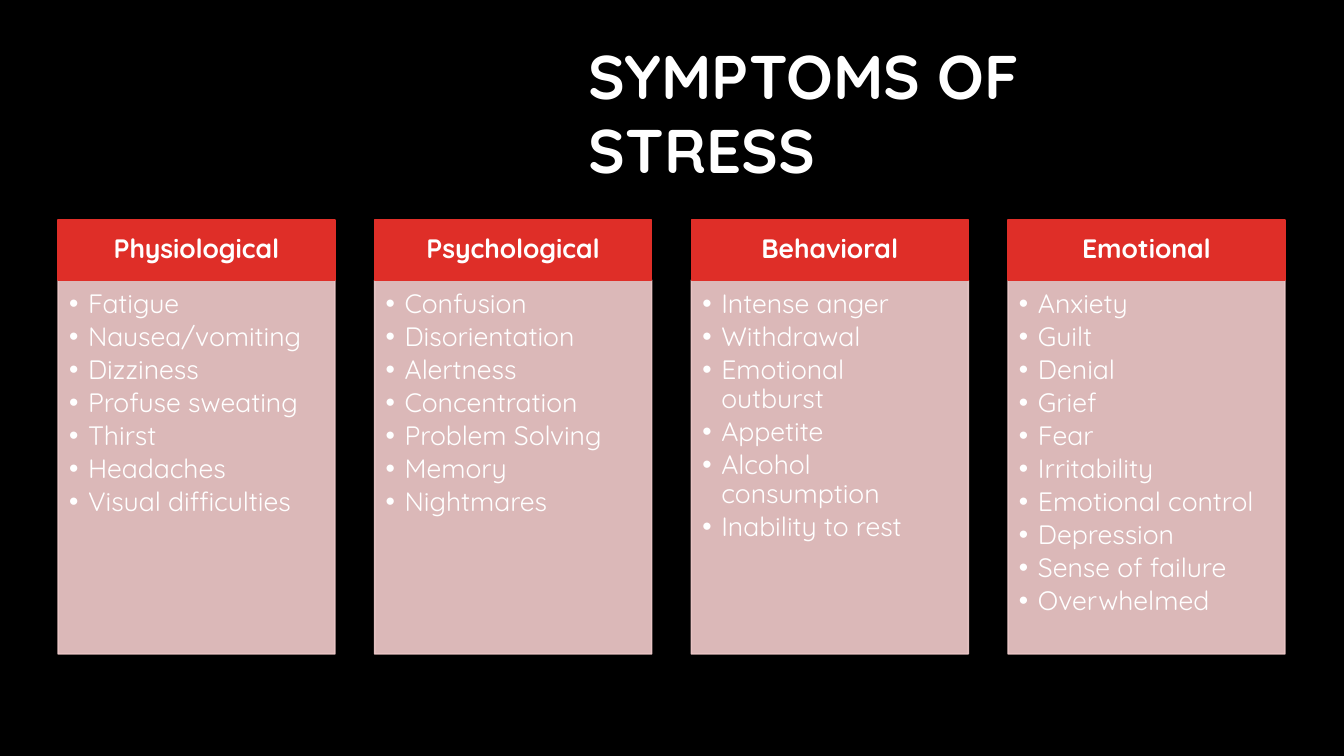
from lxml.etree import SubElement
from pptx import Presentation
from pptx.dml.color import RGBColor
from pptx.enum.shapes import MSO_SHAPE
from pptx.enum.text import MSO_ANCHOR, MSO_AUTO_SIZE, PP_ALIGN
from pptx.oxml.ns import qn
from pptx.util import Pt

EMU_PER_PX = 914400 / 100.8
BLACK, WHITE, RED, PINK = "000000", "FFFFFF", "DF2E28", "F3CDCD"
COMPARISON_LAYOUT = 4
COLUMN_WIDTH, HEADING_HEIGHT, BULLET_INDENT = 277, 60, 19

SYMPTOMS = {
    "Physiological": ["Fatigue", "Nausea/vomiting", "Dizziness", "Profuse sweating",
                      "Thirst", "Headaches", "Visual difficulties"],
    "Psychological": ["Confusion", "Disorientation", "Alertness", "Concentration",
                      "Problem Solving", "Memory", "Nightmares"],
    "Behavioral": ["Intense anger", "Withdrawal", "Emotional outburst", "Appetite",
                   "Alcohol consumption", "Inability to rest"],
    "Emotional": ["Anxiety", "Guilt", "Denial", "Grief", "Fear", "Irritability",
                  "Emotional control", "Depression", "Sense of failure", "Overwhelmed"],
}

TITLE_FORMAT = {"alignment": PP_ALIGN.LEFT, "line_spacing": 1.0}
HEADING_FORMAT = {"alignment": PP_ALIGN.CENTER, "line_spacing": 0.9, "space_after": Pt(7)}
SYMPTOM_FORMAT = {"alignment": PP_ALIGN.LEFT, "line_spacing": 0.9,
                  "space_before": Pt(0), "space_after": Pt(3)}


def px(length):
    """Turn pixels into EMU."""
    return round(length * EMU_PER_PX)


def color(hex_code):
    """Turn a hex string into a colour."""
    return RGBColor.from_string(hex_code)


def apply(target, values):
    """Set each attribute in values on target."""
    for attribute, value in values.items():
        setattr(target, attribute, value)


def place(part, box):
    """Move a part to a box of left, top, width and height in px."""
    apply(part, dict(zip(("left", "top", "width", "height"), map(px, box))))


def paint(panel, hex_code):
    """Give a panel a matching fill and thin outline."""
    panel.fill.solid()
    panel.fill.fore_color.rgb = color(hex_code)
    panel.line.color.rgb = color(hex_code)
    panel.line.width = Pt(1)


def write(part, lines, insets, anchor, paragraph_format, size, bold):
    """Write one formatted paragraph per line into a part."""
    frame = part.text_frame
    margins = ("margin_left", "margin_top", "margin_right", "margin_bottom")
    apply(frame, {"word_wrap": True, "auto_size": MSO_AUTO_SIZE.NONE,
                  "vertical_anchor": anchor, **dict(zip(margins, map(px, insets)))})
    frame.text = "\n".join(lines)
    for paragraph in frame.paragraphs:
        apply(paragraph, paragraph_format)
        font = paragraph.runs[0].font
        apply(font, {"name": "Quicksand", "size": Pt(size), "bold": bold})
        font.color.rgb = color(WHITE)


def add_title(slide, box):
    """Fill the title placeholder."""
    title = slide.shapes.title
    place(title, box)
    write(title, ["SYMPTOMS OF STRESS"], (10, 5, 10, 5), MSO_ANCHOR.TOP,
          TITLE_FORMAT, 44, True)


def add_heading(slide, category, box):
    """Add the red heading of a column."""
    heading = slide.shapes.add_shape(MSO_SHAPE.RECTANGLE, *map(px, box))
    heading.shadow.inherit = False
    paint(heading, RED)
    write(heading, [category], (15, 8, 15, 8), MSO_ANCHOR.MIDDLE,
          HEADING_FORMAT, 19, True)


def fill_list(symptom_list, symptoms, box):
    """Turn a body placeholder into a translucent bulleted panel."""
    place(symptom_list, box)
    paint(symptom_list, PINK)
    for shade in symptom_list._element.spPr.iter(qn("a:srgbClr")):
        SubElement(shade, qn("a:alpha"), val="90000")
    write(symptom_list, symptoms, (11, 11, 15, 17), MSO_ANCHOR.TOP,
          SYMPTOM_FORMAT, 19, False)
    for paragraph in symptom_list.text_frame.paragraphs:
        properties = paragraph._p.get_or_add_pPr()
        properties.set("marL", str(px(BULLET_INDENT)))
        properties.set("indent", str(-px(BULLET_INDENT)))
        SubElement(properties, qn("a:buChar"), char="•")


def add_columns(slide, box):
    """Spread one headed list per category evenly over the box."""
    left, top, width, height = box
    step = (width - COLUMN_WIDTH) / (len(SYMPTOMS) - 1)
    lists = [part for part in slide.placeholders if part.placeholder_format.idx > 0]
    for index, (category, symptoms) in enumerate(SYMPTOMS.items()):
        column_left = left + index * step
        add_heading(slide, category, (column_left, top, COLUMN_WIDTH, HEADING_HEIGHT))
        fill_list(lists[index], symptoms,
                  (column_left, top + HEADING_HEIGHT, COLUMN_WIDTH, height - HEADING_HEIGHT))


def main():
    """Build and save the slide."""
    deck = Presentation()
    apply(deck, {"slide_width": px(1344), "slide_height": px(756)})
    slide = deck.slides.add_slide(deck.slide_layouts[COMPARISON_LAYOUT])
    slide.background.fill.solid()
    slide.background.fill.fore_color.rgb = color(BLACK)
    add_title(slide, (579, 33, 657, 85))
    add_columns(slide, (58, 220, 1227, 434))
    deck.save("out.pptx")


if __name__ == "__main__":
    main()
